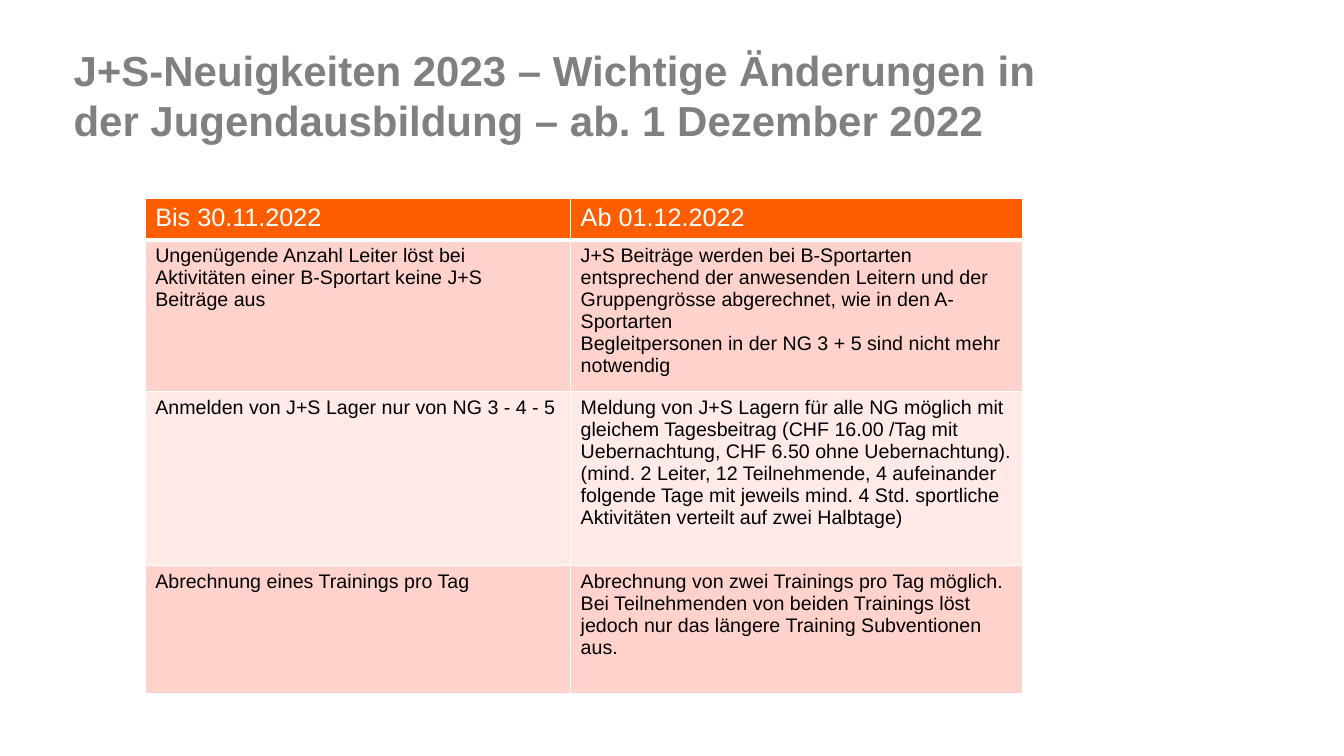
from dataclasses import dataclass

from lxml import etree
from pptx import Presentation
from pptx import util as u
from pptx.dml.color import RGBColor
from pptx.enum import text as t
from pptx.oxml import ns

PX = 9144  # EMU per px, 100 px to the inch
FONT = "Arial"
HUES = {
    "title": "808080",
    "head": "FF5E00",
    "dark": "FFD2CC",
    "light": "FFEAE7",
    "white": "FFFFFF",
    "black": "000000",
}
COLS = (422, 448)


@dataclass
class Row:
    high: int
    fill: str
    old: str
    new: str
    size: int = 14
    ink: str = "black"
    base: int = 1  # bottom border in points


ROWS = [
    Row(41, "head", "Bis 30.11.2022", "Ab 01.12.2022", 18, "white", 3),
    Row(150, "dark",
        "Ungenügende Anzahl Leiter löst bei Aktivitäten einer B-Sportart "
        "keine J+S Beiträge aus",
        "J+S Beiträge werden bei B-Sportarten entsprechend der anwesenden "
        "Leitern und der Gruppengrösse abgerechnet, wie in den A-Sportarten\n"
        "Begleitpersonen in der NG 3 + 5 sind nicht mehr notwendig"),
    Row(173, "light",
        "Anmelden von J+S Lager nur von NG 3 - 4 - 5",
        "Meldung von J+S Lagern für alle NG möglich mit gleichem Tagesbeitrag "
        "(CHF 16.00 /Tag mit Uebernachtung, CHF 6.50 ohne Uebernachtung).\n"
        "(mind. 2 Leiter, 12 Teilnehmende, 4 aufeinander folgende Tage mit "
        "jeweils mind. 4 Std. sportliche Aktivitäten verteilt auf zwei "
        "Halbtage)"),
    Row(127, "dark",
        "Abrechnung eines Trainings pro Tag",
        "Abrechnung von zwei Trainings pro Tag möglich. Bei Teilnehmenden von "
        "beiden Trainings löst jedoch nur das längere Training Subventionen "
        "aus."),
]


def px(num: int) -> u.Emu:
    return u.Emu(num * PX)


def hue(name: str) -> RGBColor:
    return RGBColor.from_string(HUES[name])


def write(frame, words: str, *, size: int, ink: str, bold: bool = False) -> None:
    """Fill a text frame, one paragraph per line of words."""
    frame.text = words
    for para in frame.paragraphs:
        para.alignment = t.PP_ALIGN.LEFT
        for run in para.runs:
            font = run.font
            font.name, font.size, font.bold = FONT, u.Pt(size), bold
            font.color.rgb = hue(ink)


def edge(cell, side: str, width: int) -> None:
    """Add a white border; call before the cell gets its fill."""
    props = cell._tc.get_or_add_tcPr()
    line = etree.SubElement(props, ns.qn(f"a:ln{side}"), w=str(u.Pt(width)))
    fill = etree.SubElement(line, ns.qn("a:solidFill"))
    etree.SubElement(fill, ns.qn("a:srgbClr"), val=HUES["white"])


def add_title(slide) -> None:
    box = slide.shapes.add_textbox(px(73), px(44), px(1012), px(39))
    frame = box.text_frame
    frame.word_wrap = True
    frame.margin_left = frame.margin_right = 0
    frame.margin_top = frame.margin_bottom = 0
    write(frame,
          "J+S-Neuigkeiten 2023 – Wichtige Änderungen in der "
          "Jugendausbildung – ab. 1 Dezember 2022",
          size=30, ink="title", bold=True)


def add_grid(slide) -> None:
    high = sum(row.high for row in ROWS)
    shape = slide.shapes.add_table(len(ROWS), len(COLS), px(144), px(197),
                                   px(sum(COLS)), px(high))
    table = shape.table
    for col, wide in zip(table.columns, COLS):
        col.width = px(wide)
    for line, row in zip(table.rows, ROWS):
        line.height = px(row.high)
        for cell, words in zip(line.cells, (row.old, row.new)):
            for side in "LRT":
                edge(cell, side, 1)
            edge(cell, "B", row.base)
            cell.fill.solid()
            cell.fill.fore_color.rgb = hue(row.fill)
            write(cell.text_frame, words, size=row.size, ink=row.ink)


def main() -> None:
    deck = Presentation()
    deck.slide_width, deck.slide_height = px(1333), px(750)
    slide = deck.slides.add_slide(deck.slide_layouts[6])
    # Heading
    add_title(slide)
    # Comparison of old and new rules
    add_grid(slide)
    deck.save("out.pptx")


if __name__ == "__main__":
    main()
